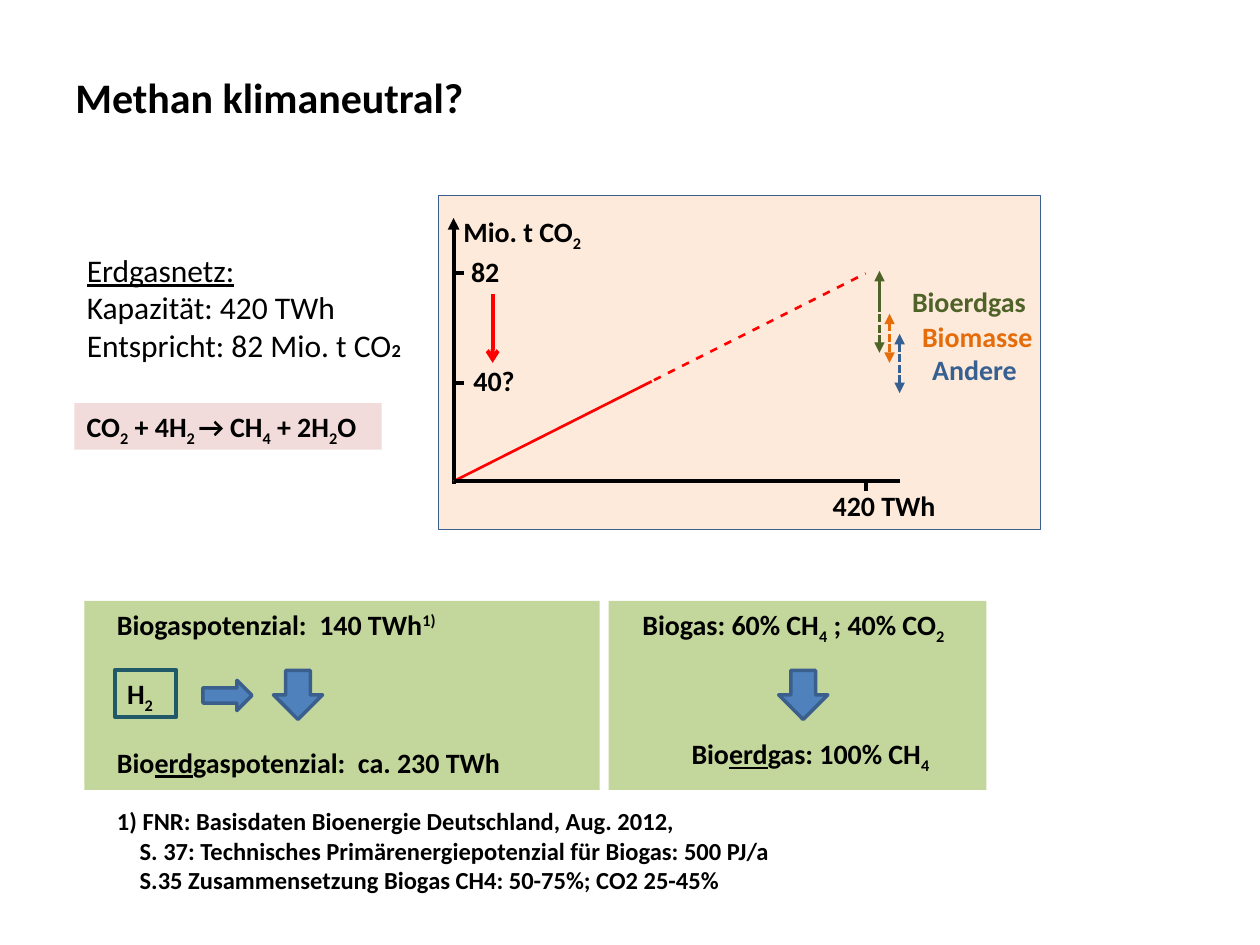
from dataclasses import dataclass

from lxml import etree
from pptx import Presentation
from pptx.dml.color import RGBColor
from pptx.enum.dml import MSO_LINE
from pptx.enum.shapes import MSO_CONNECTOR, MSO_SHAPE
from pptx.enum.text import MSO_ANCHOR, MSO_AUTO_SIZE, PP_ALIGN
from pptx.oxml.ns import qn
from pptx.util import Inches, Pt

RECT = MSO_SHAPE.RECTANGLE
DOWN_ARROW = MSO_SHAPE.DOWN_ARROW
RIGHT_ARROW = MSO_SHAPE.RIGHT_ARROW
STRAIGHT = MSO_CONNECTOR.STRAIGHT
DASHED = MSO_LINE.SQUARE_DOT
DOTTED = MSO_LINE.ROUND_DOT
TOP, MIDDLE = MSO_ANCHOR.TOP, MSO_ANCHOR.MIDDLE
LEFT = PP_ALIGN.LEFT
GROW = MSO_AUTO_SIZE.SHAPE_TO_FIT_TEXT
FIXED = MSO_AUTO_SIZE.NONE


@dataclass(frozen=True)
class Theme:
    font: str = "Calibri"
    black: str = "000000"
    red: str = "FF0000"
    panel: str = "FDEADA"
    pink: str = "F2DCDB"
    green: str = "C3D69B"
    blue: str = "4F81BD"
    blue_edge: str = "3A5F8C"
    teal: str = "215968"
    natural_gas: str = "4F6228"
    biomass: str = "E46C0A"
    other: str = "376092"
    title: float = 24
    body: float = 18
    label: float = 16
    note: float = 14
    small: float = 10.5


THEME = Theme()
SUB = {"baseline": -25000}
SUPER = {"baseline": 30000}
UNDERLINED = {"underline": True}
TINY_BOLD = {"size": Pt(THEME.small), "bold": True}


class SlideBuilder:
    def __init__(self, slide, theme):
        self.shapes = slide.shapes
        self.theme = theme

    def set_text(self, shape, paragraphs, size=None, color=None, bold=True,
                 wrap=False, anchor=TOP, fit=GROW, indent=0):
        """Fill a shape; a run is a string or a (string, format) pair.

        The indent applies to every paragraph after the first.
        """
        frame = shape.text_frame
        settings = {"word_wrap": wrap, "auto_size": fit, "vertical_anchor": anchor}
        for name, value in settings.items():
            setattr(frame, name, value)
        for index, runs in enumerate(paragraphs):
            paragraph = frame.add_paragraph() if index else frame.paragraphs[0]
            paragraph.alignment = LEFT
            if index and indent:
                paragraph._p.get_or_add_pPr().set("marL", str(Inches(indent)))
            for item in runs:
                words, extra = (item, {}) if isinstance(item, str) else item
                run = paragraph.add_run()
                run.text = words
                run.font.color.rgb = RGBColor.from_string(color or self.theme.black)
                style = {"name": self.theme.font, "bold": bold,
                         "size": Pt(size or self.theme.label), **extra}
                baseline = style.pop("baseline", None)
                for name, value in style.items():
                    setattr(run.font, name, value)
                if baseline:
                    run._r.get_or_add_rPr().set("baseline", str(baseline))

    def text(self, box, *paragraphs, **style):
        self.set_text(self.shapes.add_textbox(*map(Inches, box)), paragraphs, **style)

    def shape(self, kind, box, fill, edge=None, width=0):
        shape = self.shapes.add_shape(kind, *map(Inches, box))
        shape.shadow.inherit = False
        shape.fill.solid()
        shape.fill.fore_color.rgb = RGBColor.from_string(fill)
        if edge:
            shape.line.color.rgb = RGBColor.from_string(edge)
            shape.line.width = Pt(width)
        else:
            shape.line.fill.background()
        return shape

    def block_arrow(self, kind, box):
        self.shape(kind, box, self.theme.blue, self.theme.blue_edge, 2)

    def line(self, start, end, color, width, dash=None, head=None, tail=None):
        line = self.shapes.add_connector(STRAIGHT, *map(Inches, (*start, *end)))
        line.line.color.rgb = RGBColor.from_string(color)
        line.line.width = Pt(width)
        if dash:
            line.line.dash_style = dash
        properties = line.element.spPr
        outline = properties.find(qn("a:ln"))
        for tag, arrowhead in (("a:headEnd", head), ("a:tailEnd", tail)):
            if arrowhead:
                etree.SubElement(outline, qn(tag)).set("type", arrowhead)
        etree.SubElement(properties, qn("a:effectLst"))


def add_facts(page):
    page.text((0.5, 0.3, 9, 0.93), ["Methan klimaneutral?"], size=THEME.title,
              wrap=True, anchor=MIDDLE, fit=FIXED)
    page.text((0.59, 1.94, 2.71, 1.01), [("Erdgasnetz:", UNDERLINED)],
              ["Kapazität: 420 TWh"],
              ["Entspricht: 82 Mio. t CO", ("2", TINY_BOLD)],
              size=THEME.body, bold=False)
    reaction = page.shape(RECT, (0.59, 3.2, 2.44, 0.37), THEME.pink)
    page.set_text(reaction, [["CO", ("2", SUB), " + 4H", ("2 ", SUB), "→ CH",
                              ("4", SUB), " + 2H", ("2", SUB), "O"]])


def add_emission_diagram(page):
    origin_x, origin_y = 3.6, 3.82
    capacity_x, full_y, half_y = 6.87, 2.17, 3.04
    tick = 0.08
    axis = {"color": THEME.black, "width": 2.25}

    page.shape(RECT, (3.48, 1.55, 4.78, 2.65), THEME.panel, THEME.blue_edge, 0.25)
    page.line((origin_x, origin_y + 0.02), (origin_x, 1.73), tail="triangle", **axis)
    page.line((origin_x, origin_y), (capacity_x, full_y), THEME.red, 1.5)
    page.line((capacity_x, full_y + 0.01), (5.17, 3.02), THEME.panel, 4.5, DOTTED)
    page.line((origin_x, origin_y), (7.14, origin_y), **axis)
    page.line((capacity_x, origin_y + tick), (capacity_x, origin_y), **axis)
    for y in (full_y, half_y):
        page.line((origin_x, y), (origin_x + tick, y), **axis)
    page.line((3.91, 2.33), (3.91, 2.88), THEME.red, 2.25, tail="arrow")

    page.text((3.58, 1.65, 1.2, 0.37), ["Mio. t CO", ("2", SUB)])
    for box, value in (((3.64, 1.97, 0.43, 0.37), "82"),
                       ((3.66, 2.84, 0.53, 0.37), "40?"),
                       ((6.51, 3.83, 1.02, 0.37), "420 TWh")):
        page.text(box, [value])

    page.line((6.98, 2.41), (6.98, 2.15), THEME.natural_gas, 1.5, tail="triangle")
    page.line((6.98, 2.41), (6.98, 2.8), THEME.natural_gas, 1.5, DASHED,
              tail="triangle")
    for x, top, bottom, color in ((7.06, 2.49, 2.88, THEME.biomass),
                                  (7.14, 2.65, 3.12, THEME.other)):
        page.line((x, top), (x, bottom), color, 1.5, DASHED, "triangle", "triangle")
    for box, source, color in (
            ((7.14, 2.21, 1.12, 0.37), "Bioerdgas", THEME.natural_gas),
            ((7.22, 2.49, 1.09, 0.37), "Biomasse", THEME.biomass),
            ((7.3, 2.75, 0.88, 0.37), "Andere", THEME.other)):
        page.text(box, [source], color=color)


def add_biogas_boxes(page):
    for left, width, arrow_x in ((0.67, 4.09, 2.17), (4.83, 3, 6.18)):
        page.shape(RECT, (left, 4.77, width, 1.5), THEME.green)
        page.block_arrow(DOWN_ARROW, (arrow_x, 5.32, 0.39, 0.39))
    page.block_arrow(RIGHT_ARROW, (1.61, 5.4, 0.39, 0.24))
    hydrogen = page.shape(RECT, (0.91, 5.32, 0.49, 0.37), THEME.green,
                          THEME.teal, 2.25)
    page.set_text(hydrogen, [["H", ("2", SUB)]], wrap=True)

    page.text((0.83, 4.77, 2.78, 0.37),
              ["Biogaspotenzial:  140 TWh", ("1)", SUPER)])
    page.text((0.83, 5.87, 3.28, 0.37),
              ["Bio", ("erd", UNDERLINED), "gaspotenzial:  ca. 230 TWh"])
    page.text((5, 4.77, 2.65, 0.37),
              ["Biogas: 60% CH", ("4", SUB), " ; 40% CO", ("2", SUB)])
    page.text((5.39, 5.8, 2.12, 0.37),
              ["Bio", ("erd", UNDERLINED), "gas: 100% CH", ("4", SUB)])
    page.text((0.83, 6.35, 5.69, 0.81),
              ["1) FNR: Basisdaten Bioenergie Deutschland, Aug. 2012,"],
              ["S. 37: Technisches Primärenergiepotenzial für Biogas: 500 PJ/a"],
              ["S.35 Zusammensetzung Biogas CH4: 50-75%; CO2 25-45%"],
              size=THEME.note, wrap=True, indent=0.18)


def main():
    deck = Presentation()
    deck.slide_width, deck.slide_height = Inches(10), Inches(7.5)
    page = SlideBuilder(deck.slides.add_slide(deck.slide_layouts[6]), THEME)
    add_facts(page)
    add_emission_diagram(page)
    add_biogas_boxes(page)
    deck.save("out.pptx")


if __name__ == "__main__":
    main()
